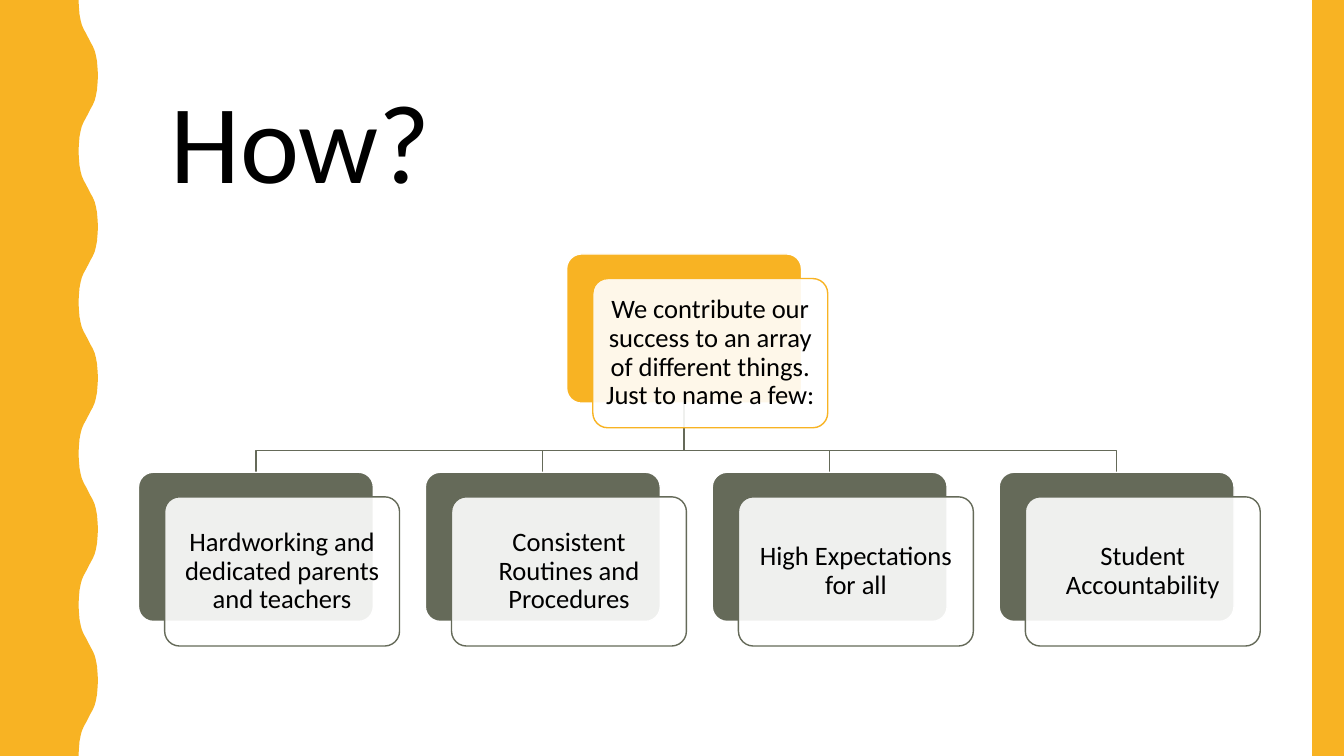
from lxml import etree
from pptx import Presentation
from pptx.dml.color import RGBColor
from pptx.enum.shapes import MSO_SHAPE
from pptx.enum.text import MSO_ANCHOR, MSO_AUTO_SIZE, PP_ALIGN
from pptx.oxml.ns import qn
from pptx.util import Cm, Pt

RECTANGLE = MSO_SHAPE.RECTANGLE
ROUNDED = MSO_SHAPE.ROUNDED_RECTANGLE
TOP, MIDDLE = MSO_ANCHOR.TOP, MSO_ANCHOR.MIDDLE
LEFT, CENTER = PP_ALIGN.LEFT, PP_ALIGN.CENTER
GROW, FIXED = MSO_AUTO_SIZE.SHAPE_TO_FIT_TEXT, MSO_AUTO_SIZE.NONE

COLORS = {"gold": "F8B323", "olive": "656A59", "white": "FFFFFF", "black": "000000"}
FONT = "Calibri"
TITLE_ONLY = 5

# All lengths are in centimetres.
PAGE_WIDTH, PAGE_HEIGHT = 33.87, 19.05
HALF_WAVES = 10
# Half a wave from trough to crest, as (across, down) shares; the second half mirrors the first.
QUARTER_WAVE = [(0, 0), (0.02, 0.09), (0.05, 0.19), (0.11, 0.27),
                (0.17, 0.33), (0.27, 0.39), (0.38, 0.44), (0.5, 0.5)]
HALF_WAVE = QUARTER_WAVE + [(1 - across, 1 - down) for across, down in QUARTER_WAVE[-2::-1]]

CARD_WIDTH, CARD_HEIGHT = 5.92, 3.76
CARD_SHIFT_X, CARD_SHIFT_Y = 0.66, 0.62
CARD_PITCH = 7.23
BEND_GAP = 0.55

ROOT = "We contribute our success to an array of different things. Just to name a few:"
REASONS = [
    "Hardworking and dedicated parents and teachers",
    "Consistent Routines and Procedures",
    "High Expectations for all",
    "Student Accountability",
]


def rgb(name):
    return RGBColor.from_string(COLORS[name])


def style(shape, fill=None, line=None):
    shape.shadow.inherit = False
    if fill:
        shape.fill.solid()
        shape.fill.fore_color.rgb = rgb(fill)
    else:
        shape.fill.background()
    if line:
        shape.line.color.rgb = rgb(line)
        shape.line.width = Pt(1)
    else:
        shape.line.fill.background()


def add_path(shapes, points, closed):
    (first, *rest) = [(Cm(x), Cm(y)) for x, y in points]
    builder = shapes.build_freeform(*first)
    builder.add_line_segments(rest, close=closed)
    return builder.convert_to_shape()


def add_box(shapes, kind, left, top, width, height):
    return shapes.add_shape(kind, Cm(left), Cm(top), Cm(width), Cm(height))


def write(frame, text, size, align):
    para = frame.paragraphs[0]
    para.alignment = align
    para.line_spacing = 0.9 if align == CENTER else 1.0
    span = para.add_run()
    span.text = text
    span.font.name = FONT
    span.font.size = Pt(size)
    span.font.color.rgb = rgb("black")


def add_wavy_band(page, left, top, width, height, depth):
    """Draw a band whose right edge swings by depth up to the full width."""
    step = height / HALF_WAVES
    edge = []
    for index in range(HALF_WAVES):
        for across, down in HALF_WAVE[:-1]:
            share = across if index % 2 == 0 else 1 - across
            edge.append((left + width - depth * (1 - share), top + step * (index + down)))
    trough = left + width - depth
    points = [(left, top), *edge, (trough, top + height), (left, top + height)]
    style(add_path(page.shapes, points, closed=True), "gold")


def add_strip(page, left, top, width, height):
    style(add_box(page.shapes, RECTANGLE, left, top, width, height), "gold")


def add_title(page, left, top, width, height):
    title = page.shapes.title
    title.left, title.top, title.width, title.height = map(Cm, (left, top, width, height))
    frame = title.text_frame
    frame.word_wrap = False
    frame.auto_size = GROW
    frame.vertical_anchor = TOP
    write(frame, "How?", 80, LEFT)


def add_card(shapes, left, top, text, color):
    """Draw a solid card with a translucent text card shifted over it."""
    back = add_box(shapes, ROUNDED, left, top, CARD_WIDTH, CARD_HEIGHT)
    front = add_box(shapes, ROUNDED, left + CARD_SHIFT_X, top + CARD_SHIFT_Y,
                    CARD_WIDTH, CARD_HEIGHT)
    style(back, color, "white")
    style(front, "white", color)
    back.adjustments[0] = front.adjustments[0] = 0.1
    tint = front.fill._xPr.find(qn("a:solidFill")).find(qn("a:srgbClr"))
    etree.SubElement(tint, qn("a:alpha"), val="90000")

    frame = front.text_frame
    frame.word_wrap = True
    frame.auto_size = FIXED
    frame.vertical_anchor = MIDDLE
    frame.margin_left = frame.margin_right = Cm(0.2)
    frame.margin_top = frame.margin_bottom = Cm(0.2)
    write(frame, text, 19, CENTER)


def add_hierarchy(page, left, top, root_shift, row_shift):
    """Place the root card and, row_shift below it, the row of reasons."""
    shapes = page.shapes.add_group_shape().shapes
    root_left, row_top = left + root_shift, top + row_shift
    lefts = [left + CARD_PITCH * index for index in range(len(REASONS))]
    root_middle, bend = root_left + CARD_WIDTH / 2, row_top - BEND_GAP

    for card_left in lefts:
        middle = card_left + CARD_WIDTH / 2
        branch = [(root_middle, top + CARD_HEIGHT), (root_middle, bend),
                  (middle, bend), (middle, row_top)]
        style(add_path(shapes, branch, closed=False), line="olive")

    add_card(shapes, root_left, top, ROOT, "gold")
    for card_left, reason in zip(lefts, REASONS):
        add_card(shapes, card_left, row_top, reason, "olive")


def main():
    deck = Presentation()
    deck.slide_width, deck.slide_height = Cm(PAGE_WIDTH), Cm(PAGE_HEIGHT)
    page = deck.slides.add_slide(deck.slide_layouts[TITLE_ONLY])
    add_wavy_band(page, 0, 0, 2.47, PAGE_HEIGHT, depth=0.49)
    add_strip(page, 33.07, 0, PAGE_WIDTH - 33.07, PAGE_HEIGHT)
    add_title(page, 4.04, 1.68, 7.14, 3.68)
    add_hierarchy(page, 3.49, 6.4, root_shift=10.79, row_shift=5.5)
    deck.save("out.pptx")


if __name__ == "__main__":
    main()
